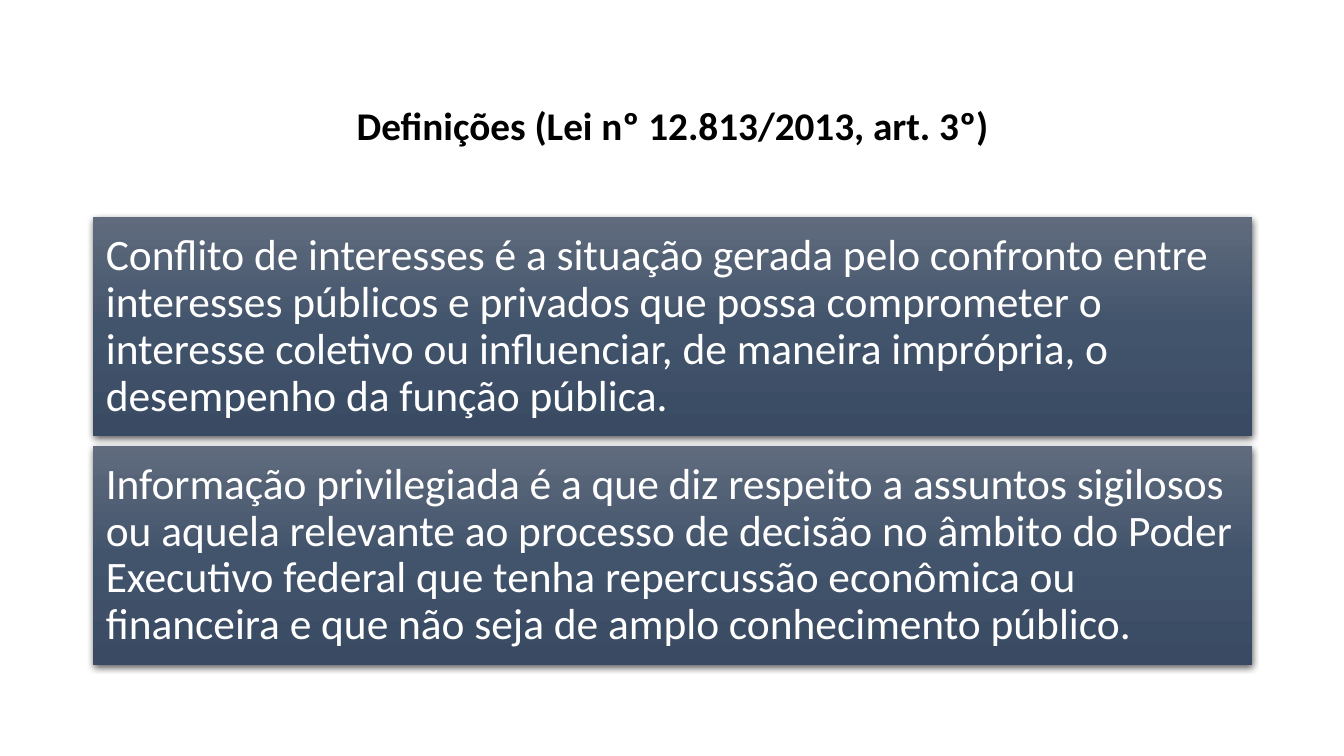
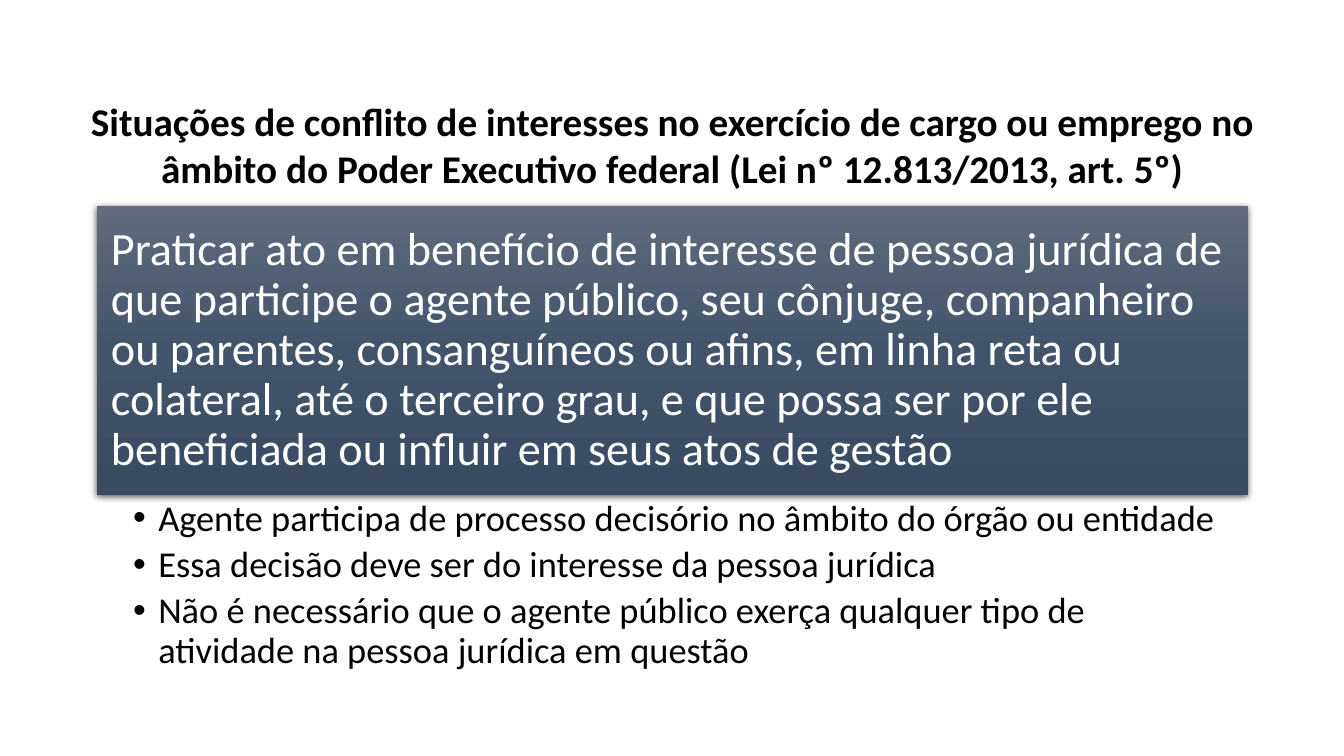
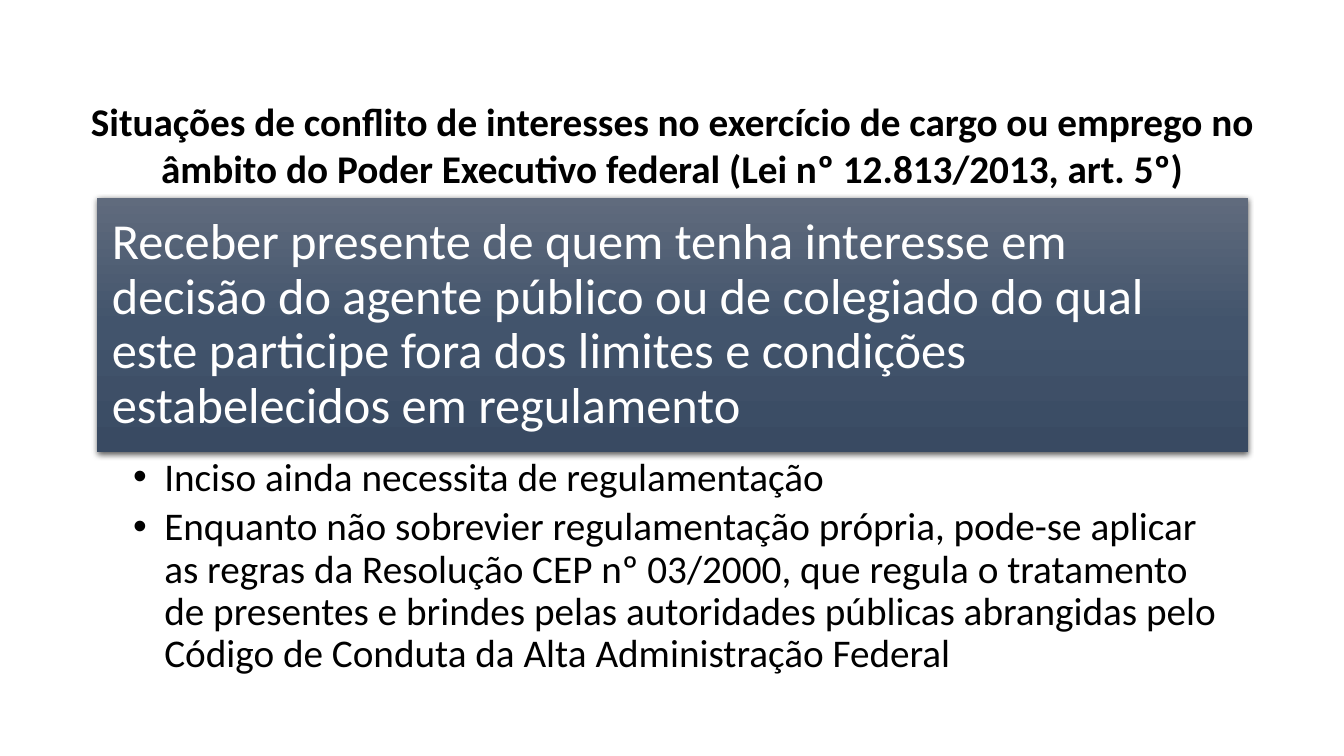
from copy import deepcopy

from lxml.etree import SubElement
from pptx import Presentation
from pptx.dml.color import RGBColor
from pptx.enum.shapes import MSO_SHAPE
from pptx.enum.text import MSO_ANCHOR, PP_ALIGN
from pptx.oxml.ns import qn
from pptx.util import Inches, Pt

BLACK = RGBColor(0x00, 0x00, 0x00)
WHITE = RGBColor(0xFF, 0xFF, 0xFF)
STOPS = [
    (0, RGBColor(0x60, 0x6B, 0x7D)),
    (0.5, RGBColor(0x42, 0x54, 0x6C)),
    (1, RGBColor(0x39, 0x4A, 0x62)),
]
FONT = "Calibri"


def write(shape, lines, size, color=BLACK, bold=False, align=PP_ALIGN.LEFT,
          anchor=MSO_ANCHOR.MIDDLE, inset=(0.1, 0.05, 0.1, 0.05),
          spacing=0.9, after=0, indent=0):
    """Fill a shape with paragraphs; an indent above zero adds bullets."""
    frame = shape.text_frame
    frame.word_wrap = True
    frame.vertical_anchor = anchor
    (frame.margin_left, frame.margin_top,
     frame.margin_right, frame.margin_bottom) = map(Inches, inset)
    for i, line in enumerate(lines):
        para = frame.add_paragraph() if i else frame.paragraphs[0]
        para.text = line
        para.alignment = align
        para.line_spacing = spacing
        para.space_after = Pt(after)
        if indent:
            props = para._p.get_or_add_pPr()
            props.set("marL", str(Inches(indent)))
            props.set("indent", str(-Inches(indent)))
            SubElement(props, qn("a:buFont")).set("typeface", "Arial")
            SubElement(props, qn("a:buChar")).set("char", "•")
        font = para.font
        font.name, font.size, font.bold = FONT, Pt(size), bold
        font.color.rgb = color


def add_panel(slide, text, left, top, width, height, size, pad):
    """Add a shaded, shadowed rectangle with white text."""
    panel = slide.shapes.add_shape(
        MSO_SHAPE.RECTANGLE, *map(Inches, (left, top, width, height)))
    panel.line.fill.background()
    panel.fill.gradient()
    panel.fill.gradient_angle = 270
    stops = panel._element.spPr.find(".//" + qn("a:gsLst"))
    stops.append(deepcopy(stops[0]))
    for stop, (place, color) in zip(panel.fill.gradient_stops, STOPS):
        stop.position = place
        stop.color.rgb = color

    panel.shadow.inherit = False
    effects = panel._element.spPr.find(qn("a:effectLst"))
    shadow = SubElement(effects, qn("a:outerShdw"), blurRad=str(Pt(4.5)),
                        dist=str(Pt(1.5)), dir="5400000", algn="ctr",
                        rotWithShape="0")
    tint = SubElement(shadow, qn("a:srgbClr"), val=str(BLACK))
    SubElement(tint, qn("a:alpha"), val="63000")
    write(panel, [text], size, color=WHITE, inset=[pad] * 4)


deck = Presentation()
deck.slide_width, deck.slide_height = Inches(13.33), Inches(7.5)
blank = deck.slide_layouts[6]

# Definitions
TERMS = [
    "Conflito de interesses é a situação gerada pelo confronto entre "
    "interesses públicos e privados que possa comprometer o interesse "
    "coletivo ou influenciar, de maneira imprópria, o desempenho da "
    "função pública.",
    "Informação privilegiada é a que diz respeito a assuntos sigilosos ou "
    "aquela relevante ao processo de decisão no âmbito do Poder Executivo "
    "federal que tenha repercussão econômica ou financeira e que não seja "
    "de amplo conhecimento público.",
]
slide = deck.slides.add_slide(blank)
title = slide.shapes.add_textbox(
    Inches(0.92), Inches(0.98), Inches(11.5), Inches(0.57))
write(title, ["Definições (Lei nº 12.813/2013, art. 3º)"], 28, bold=True,
      align=PP_ALIGN.CENTER)
for row, term in enumerate(TERMS):
    add_panel(slide, term, 0.92, 2.15 + row * 2.27, 11.5, 2.18, 31, 0.13)

# Situations of conflict
HEAD = ("Situações de conflito de interesses no exercício de cargo ou emprego "
        "no âmbito do Poder Executivo federal (Lei nº 12.813/2013, art. 5º)")
CASES = [
    dict(
        rule="Praticar ato em benefício de interesse de pessoa jurídica de "
             "que participe o agente público, seu cônjuge, companheiro ou "
             "parentes, consanguíneos ou afins, em linha reta ou colateral, "
             "até o terceiro grau, e que possa ser por ele beneficiada ou "
             "influir em seus atos de gestão",
        top=2.04, height=2.87, size=33, pad=0.14,
        notes=[
            "Agente participa de processo decisório no âmbito do órgão ou "
            "entidade",
            "Essa decisão deve ser do interesse da pessoa jurídica",
            "Não é necessário que o agente público exerça qualquer tipo de "
            "atividade na pessoa jurídica em questão",
        ],
        depth=1.87, small=26, right=0.26, indent=0.25),
    dict(
        rule="Receber presente de quem tenha interesse em decisão do agente "
             "público ou de colegiado do qual este participe fora dos limites "
             "e condições estabelecidos em regulamento",
        top=1.96, height=2.53, size=36, pad=0.15,
        notes=[
            "Inciso ainda necessita de regulamentação",
            "Enquanto não sobrevier regulamentação própria, pode-se aplicar "
            "as regras da Resolução CEP nº 03/2000, que regula o tratamento "
            "de presentes e brindes pelas autoridades públicas abrangidas "
            "pelo Código de Conduta da Alta Administração Federal",
        ],
        depth=2.36, small=28, right=0.28, indent=0.31),
]
for case in CASES:
    slide = deck.slides.add_slide(blank)
    title = slide.shapes.add_textbox(
        Inches(0.76), Inches(0.98), Inches(11.81), Inches(0.91))
    write(title, [HEAD], 28, bold=True, align=PP_ALIGN.CENTER, spacing=1.0)
    add_panel(slide, case["rule"], 0.96, case["top"], 11.42, case["height"],
              case["size"], case["pad"])
    notes = slide.shapes.add_textbox(
        Inches(0.96), Inches(case["top"] + case["height"]),
        Inches(11.42), Inches(case["depth"]))
    write(notes, case["notes"], case["small"], anchor=MSO_ANCHOR.TOP,
          inset=(0.36, 0.05, case["right"], 0.05), after=5,
          indent=case["indent"])

deck.save("out.pptx")
